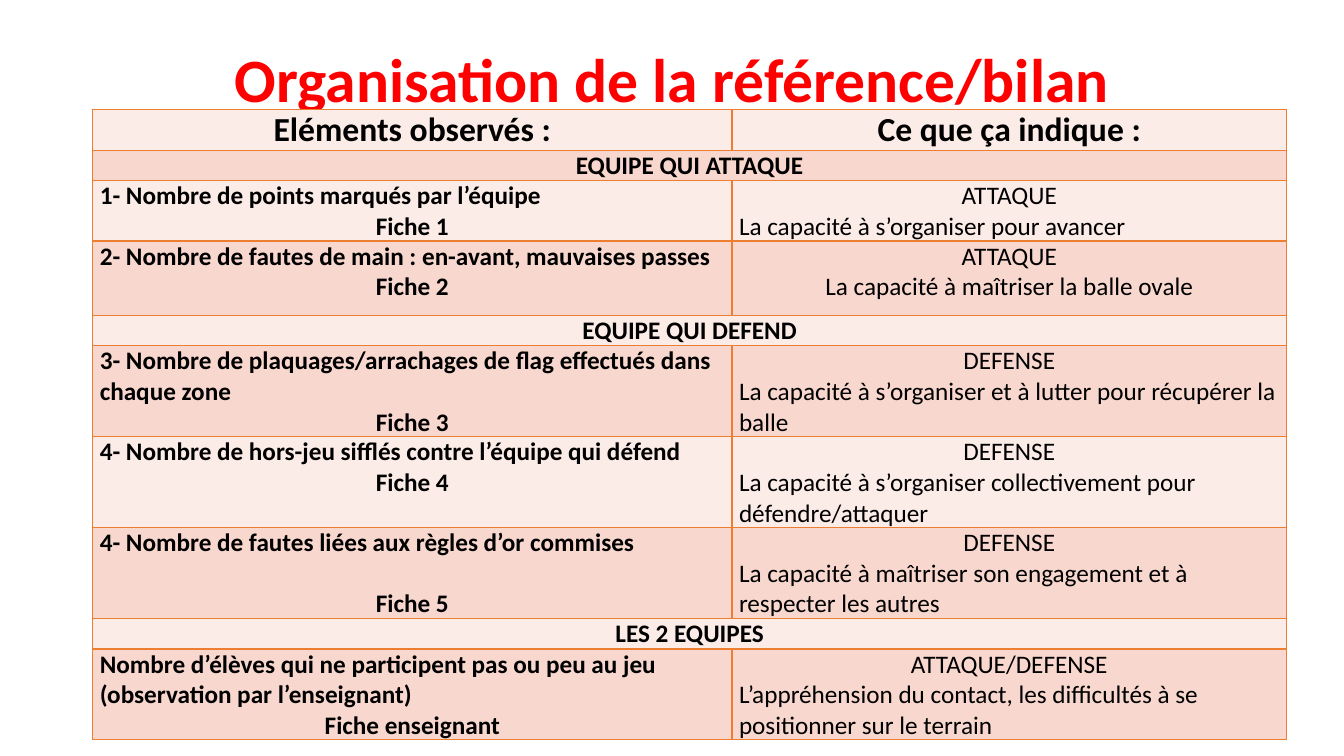
from dataclasses import dataclass

import lxml.etree
import pptx
import pptx.dml.color
import pptx.enum.text
import pptx.oxml.ns
import pptx.slide
import pptx.table
import pptx.text.text
import pptx.util

Inches = pptx.util.Inches
Pt = pptx.util.Pt
CENTER = pptx.enum.text.PP_ALIGN.CENTER
LEFT = pptx.enum.text.PP_ALIGN.LEFT


@dataclass(frozen=True)
class Theme:
    font: str = "Calibri"
    title_color: str = "FF0000"
    text_color: str = "000000"
    border_color: str = "ED7D31"
    band_fills: tuple[str, str] = ("FCECE8", "F8D7CE")
    title_size: int = 44
    header_size: int = 24
    body_size: int = 18
    border_width: float = 1


@dataclass(frozen=True)
class Header:
    labels: tuple[str, str]
    height: float = 0.33


@dataclass(frozen=True)
class Section:
    label: str
    height: float = 0.25


@dataclass(frozen=True)
class Observation:
    observed: str
    sheet: str
    role: str
    meaning: str
    height: float = 0.74
    meaning_align: pptx.enum.text.PP_ALIGN = LEFT
    sheet_gap: float = 0


@dataclass(frozen=True)
class Line:
    text: str
    align: pptx.enum.text.PP_ALIGN = CENTER
    bold: bool = True
    size: int = 18
    space_before: float = 0


THEME = Theme()
COLUMN_WIDTHS = (6.34, 5.5)
ROWS: list[Header | Section | Observation] = [
    Header(("Eléments observés :", "Ce que ça indique :")),
    Section("EQUIPE QUI ATTAQUE"),
    Observation("1- Nombre de points marqués par l’équipe", "Fiche 1",
                "ATTAQUE", "La capacité à s’organiser pour avancer", height=0.49),
    Observation("2- Nombre de fautes de main : en-avant, mauvaises passes", "Fiche 2",
                "ATTAQUE", "La capacité à maîtriser la balle ovale", meaning_align=CENTER),
    Section("EQUIPE QUI DEFEND"),
    Observation("3- Nombre de plaquages/arrachages de flag effectués dans chaque zone", "Fiche 3",
                "DEFENSE", "La capacité à s’organiser et à lutter pour récupérer la balle"),
    Observation("4- Nombre de hors-jeu sifflés contre l’équipe qui défend", "Fiche 4",
                "DEFENSE", "La capacité à s’organiser collectivement pour défendre/attaquer"),
    Observation("4- Nombre de fautes liées aux règles d’or commises", "Fiche 5",
                "DEFENSE", "La capacité à maîtriser son engagement et à respecter les autres",
                sheet_gap=22),
    Section("LES 2 EQUIPES"),
    Observation("Nombre d’élèves qui ne participent pas ou peu au jeu (observation par l’enseignant)",
                "Fiche enseignant", "ATTAQUE/DEFENSE",
                "L’appréhension du contact, les difficultés à se positionner sur le terrain"),
]


def style_paragraph(paragraph: pptx.text.text._Paragraph, line: Line, color: str) -> None:
    paragraph.text = line.text
    paragraph.alignment = line.align
    paragraph.space_before = Pt(line.space_before)
    paragraph.font.name = THEME.font
    paragraph.font.size = Pt(line.size)
    paragraph.font.bold = line.bold
    paragraph.font.color.rgb = pptx.dml.color.RGBColor.from_string(color)


def add_borders(cell: pptx.table._Cell) -> None:
    properties = cell._tc.get_or_add_tcPr()
    qualified = pptx.oxml.ns.qn
    for side in ("a:lnL", "a:lnR", "a:lnT", "a:lnB"):
        border = lxml.etree.SubElement(properties, qualified(side), w=str(Pt(THEME.border_width)))
        fill = lxml.etree.SubElement(border, qualified("a:solidFill"))
        lxml.etree.SubElement(fill, qualified("a:srgbClr"), val=THEME.border_color)


def style_cell(cell: pptx.table._Cell, fill_color: str) -> None:
    add_borders(cell)
    cell.fill.solid()
    cell.fill.fore_color.rgb = pptx.dml.color.RGBColor.from_string(fill_color)
    cell.margin_left = cell.margin_right = Inches(0.07)
    cell.margin_top = cell.margin_bottom = 0


def write_lines(cell: pptx.table._Cell, lines: list[Line]) -> None:
    text_frame = cell.text_frame
    for index, line in enumerate(lines):
        paragraph = text_frame.add_paragraph() if index else text_frame.paragraphs[0]
        style_paragraph(paragraph, line, THEME.text_color)


def row_content(row: Header | Section | Observation) -> list[list[Line]]:
    """Return the lines of each cell; a section has one merged cell."""
    if isinstance(row, Header):
        return [[Line(label, size=THEME.header_size)] for label in row.labels]
    size = THEME.body_size
    if isinstance(row, Section):
        return [[Line(row.label, size=size)]]
    return [
        [Line(row.observed, LEFT, size=size),
         Line(row.sheet, size=size, space_before=row.sheet_gap)],
        [Line(row.role, bold=False, size=size),
         Line(row.meaning, row.meaning_align, bold=False, size=size)],
    ]


def add_title(slide: pptx.slide.Slide, text: str) -> None:
    title = slide.shapes.add_textbox(Inches(0.92), Inches(0.4), Inches(11.5), Inches(0.84))
    title.text_frame.word_wrap = True
    title.text_frame.vertical_anchor = pptx.enum.text.MSO_ANCHOR.MIDDLE
    paragraph = title.text_frame.paragraphs[0]
    style_paragraph(paragraph, Line(text, size=THEME.title_size), THEME.title_color)
    paragraph.line_spacing = 0.9


def add_review_table(slide: pptx.slide.Slide) -> None:
    frame = slide.shapes.add_table(
        len(ROWS), len(COLUMN_WIDTHS), Inches(0.92), Inches(1.09),
        Inches(sum(COLUMN_WIDTHS)), Inches(sum(row.height for row in ROWS)))
    table = frame.table
    for column, width in zip(table.columns, COLUMN_WIDTHS):
        column.width = Inches(width)
    for index, row in enumerate(ROWS):
        table.rows[index].height = Inches(row.height)
        cells = list(table.rows[index].cells)
        for cell in cells:
            style_cell(cell, THEME.band_fills[index % 2])
        if isinstance(row, Section):
            cells[0].merge(cells[-1])
        for cell, lines in zip(cells, row_content(row)):
            write_lines(cell, lines)


def main() -> None:
    presentation = pptx.Presentation()
    presentation.slide_width = Inches(13.33)
    presentation.slide_height = Inches(7.5)
    slide = presentation.slides.add_slide(presentation.slide_layouts[6])

    # Title, partly covered by the table
    add_title(slide, "Organisation de la référence/bilan")

    # Observed elements and what they indicate
    add_review_table(slide)

    presentation.save("out.pptx")


if __name__ == "__main__":
    main()
